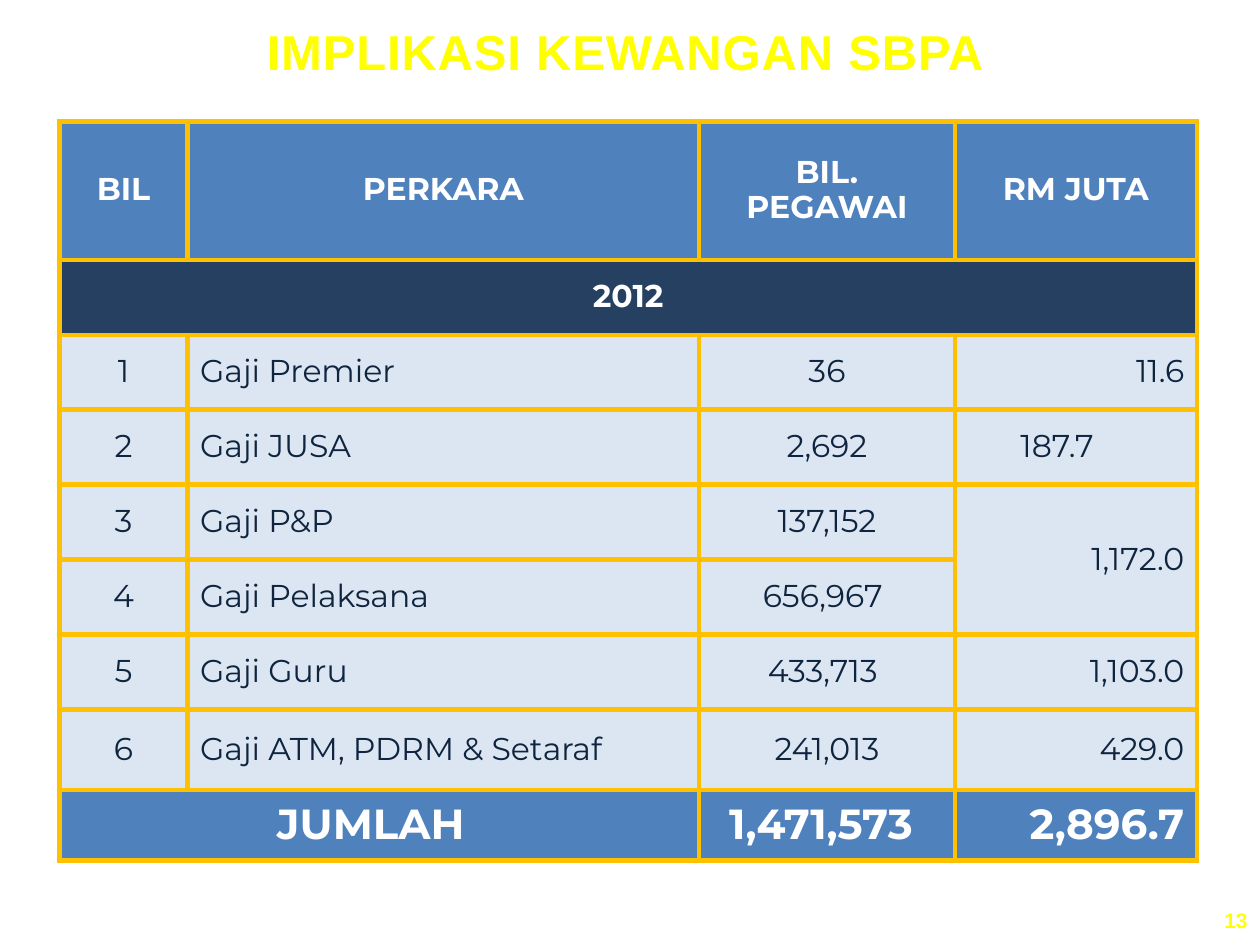
from lxml.etree import SubElement
from pptx import Presentation
from pptx.dml.color import RGBColor
from pptx.enum.text import MSO_ANCHOR as Anchor, MSO_AUTO_SIZE as AutoSize, PP_ALIGN as Align
from pptx.oxml.ns import qn
from pptx.util import Pt

YELLOW = RGBColor(0xFF, 0xFF, 0x00)
GOLD = RGBColor(0xFF, 0xC0, 0x00)
WHITE = RGBColor(0xFF, 0xFF, 0xFF)
BLUE = RGBColor(0x4F, 0x81, 0xBD)
NAVY = RGBColor(0x25, 0x40, 0x61)
PALE = RGBColor(0xDC, 0xE6, 0xF2)
INK = RGBColor(0x0F, 0x24, 0x3E)

COLUMN_WIDTHS = [73.2, 292.3, 146.2, 138.3]
ROW_HEIGHTS = [79.2] + [42.85] * 6 + [46, 40.3]
ROWS = [
    ["BIL", "PERKARA", "BIL. PEGAWAI", "RM JUTA"],
    ["2012", "", "", ""],
    ["1", "Gaji Premier", "36", "11.6"],
    ["2", "Gaji JUSA", "2,692", "187.7"],
    ["3", "Gaji P&P", "137,152", "1,172.0"],
    ["4", "Gaji Pelaksana", "656,967", ""],
    ["5", "Gaji Guru", "433,713", "1,103.0"],
    ["6", "Gaji ATM, PDRM & Setaraf", "241,013", "429.0"],
    ["JUMLAH", "", "1,471,573", "2,896.7"],
]
YEAR_ROW, TOTAL_ROW = 1, len(ROWS) - 1
MERGES = [((1, 0), (1, 3)), ((4, 3), (5, 3)), ((8, 0), (8, 1))]
BODY_ALIGN = [Align.CENTER, Align.LEFT, Align.CENTER, Align.RIGHT]
# Cells whose text sits further from the right border
RIGHT_INSETS = {(3, 3): 59, (5, 2): 12, (6, 2): 12, (8, 0): 17, (8, 2): 14}

HEADING = dict(size=Pt(18), name="Montserrat", bold=True)
BODY = dict(size=Pt(18), name="Montserrat", bold=False)
TOTAL = dict(size=Pt(24), name="Montserrat", bold=True)


def format_font(font, values, color):
    for key, value in values.items():
        setattr(font, key, value)
    font.color.rgb = color


def add_label(slide, text, box, values, align, anchor):
    label = slide.shapes.add_textbox(*(Pt(length) for length in box))
    label.text_frame.vertical_anchor = anchor
    paragraph = label.text_frame.paragraphs[0]
    paragraph.alignment = align
    run = paragraph.add_run()
    run.text = text
    format_font(run.font, values, YELLOW)
    return label


def add_title(slide):
    title = add_label(slide, "IMPLIKASI KEWANGAN SBPA", (145.4, 8.6, 429.1, 41),
                      dict(size=Pt(28), name="Arial", bold=True), Align.LEFT, Anchor.TOP)
    title.text_frame.word_wrap = False
    title.text_frame.auto_size = AutoSize.SHAPE_TO_FIT_TEXT
    # Letter spacing and text shadow
    properties = title.text_frame.paragraphs[0].runs[0].font._element
    properties.set("spc", "50")
    effects = properties.makeelement(qn("a:effectLst"))
    properties.find(qn("a:solidFill")).addnext(effects)
    shadow = SubElement(effects, qn("a:outerShdw"), blurRad="38100", dist="38100",
                        dir="2700000", algn="tl")
    black = SubElement(shadow, qn("a:srgbClr"), val="000000")
    SubElement(black, qn("a:alpha"), val="60000")


def add_borders(cell):
    properties = cell._tc.get_or_add_tcPr()
    for side in ("lnL", "lnR", "lnT", "lnB"):
        line = SubElement(properties, qn(f"a:{side}"), w=str(Pt(3)))
        fill = SubElement(line, qn("a:solidFill"))
        SubElement(fill, qn("a:srgbClr"), val=str(GOLD))


def row_style(row):
    if row == TOTAL_ROW:
        return TOTAL, WHITE, BLUE
    if row <= YEAR_ROW:
        return HEADING, WHITE, NAVY if row == YEAR_ROW else BLUE
    return BODY, INK, PALE


def fill_cell(cell, row, column, text):
    values, color, background = row_style(row)
    add_borders(cell)
    cell.fill.solid()
    cell.fill.fore_color.rgb = background
    cell.vertical_anchor = Anchor.MIDDLE
    cell.margin_top = cell.margin_bottom = Pt(1)
    cell.margin_right = Pt(RIGHT_INSETS.get((row, column), 7.2))
    if not text:
        return
    paragraph = cell.text_frame.paragraphs[0]
    paragraph.alignment = Align.CENTER if row <= YEAR_ROW else BODY_ALIGN[column]
    paragraph.line_spacing = 0.9
    run = paragraph.add_run()
    run.text = text
    format_font(run.font, values, color)


def add_cost_table(slide):
    table = slide.shapes.add_table(
        len(ROWS), len(COLUMN_WIDTHS), Pt(34), Pt(69.3),
        Pt(sum(COLUMN_WIDTHS)), Pt(sum(ROW_HEIGHTS))).table
    for column, width in zip(table.columns, COLUMN_WIDTHS):
        column.width = Pt(width)
    for row, height in zip(table.rows, ROW_HEIGHTS):
        row.height = Pt(height)
    for r, texts in enumerate(ROWS):
        for c, text in enumerate(texts):
            fill_cell(table.cell(r, c), r, c, text)
    for first, last in MERGES:
        table.cell(*first).merge(table.cell(*last))


def main():
    presentation = Presentation()
    presentation.slide_width, presentation.slide_height = Pt(720), Pt(540)
    slide = presentation.slides.add_slide(presentation.slide_layouts[6])
    # Slide number
    number = add_label(slide, "13", (552, 511.2, 168, 28.8),
                       dict(size=Pt(12), name="Arial", bold=True), Align.RIGHT, Anchor.MIDDLE)
    number.text_frame.word_wrap = True
    # Main content
    add_cost_table(slide)
    add_title(slide)
    presentation.save("out.pptx")


if __name__ == "__main__":
    main()
